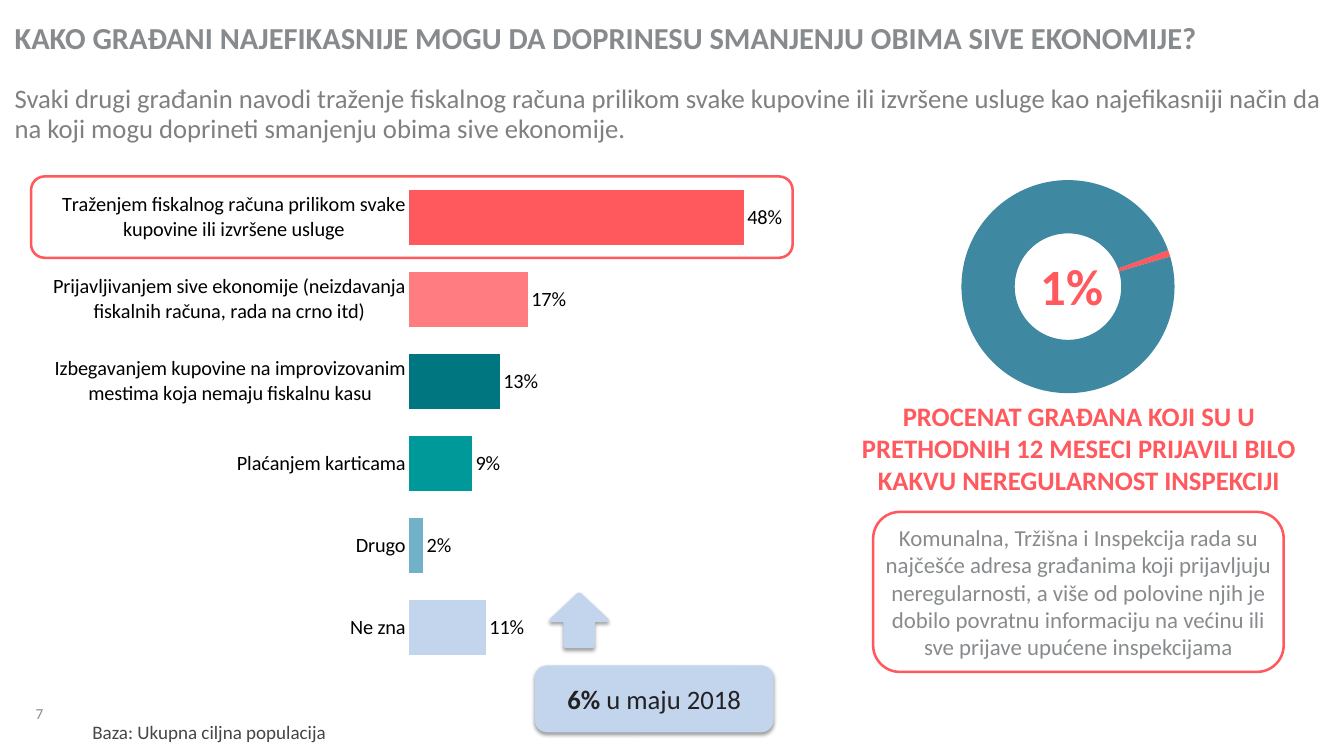
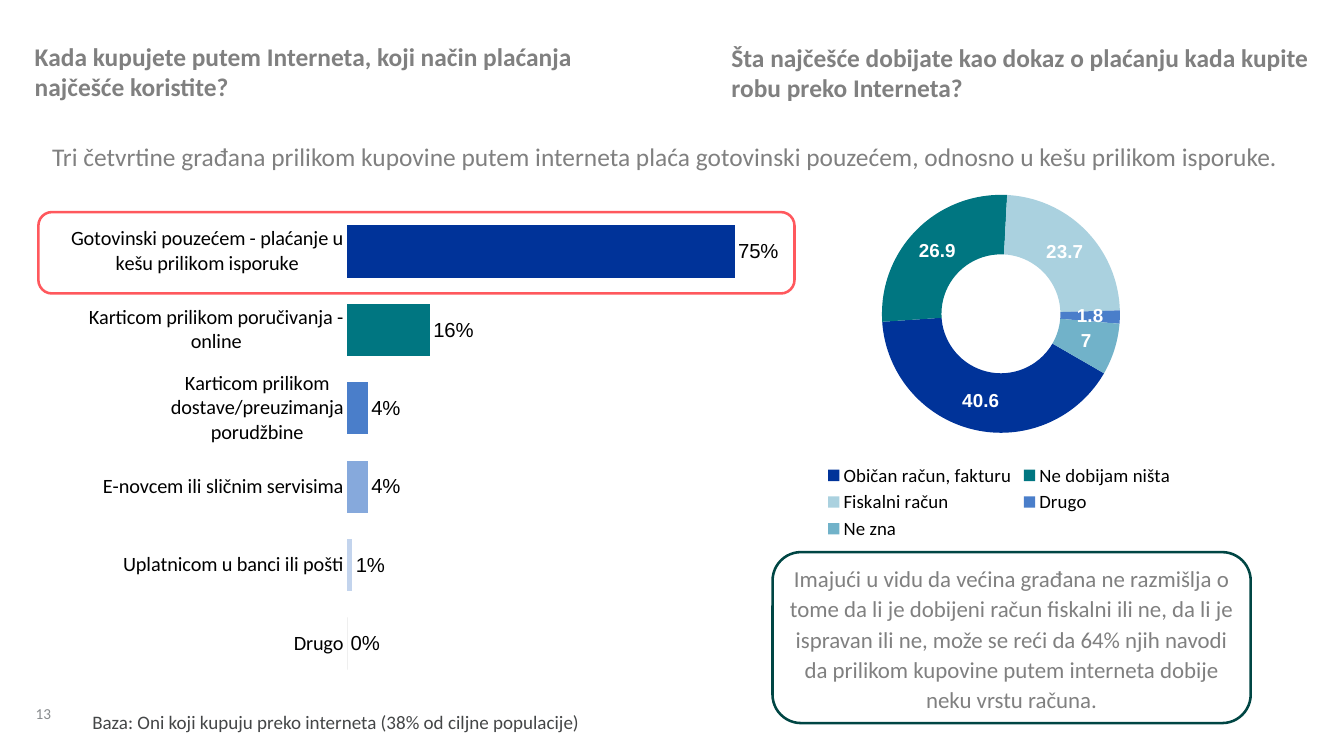
from pptx import Presentation
from pptx.chart.data import CategoryChartData
from pptx.dml.color import RGBColor
from pptx.enum.chart import (XL_CHART_TYPE as CT, XL_LABEL_POSITION as LP,
                             XL_LEGEND_POSITION as LEG, XL_TICK_MARK as TM)
from pptx.enum.shapes import MSO_SHAPE as MS
from pptx.enum.text import MSO_ANCHOR as MA, PP_ALIGN as AL
from pptx.oxml import parse_xml
from pptx.oxml.ns import nsdecls, qn
from pptx.util import Inches, Pt

# Colours
BLACK = RGBColor(0x00, 0x00, 0x00)
WHITE = RGBColor(0xFF, 0xFF, 0xFF)
INK = RGBColor(0x22, 0x22, 0x23)
DARK_GRAY = RGBColor(0x44, 0x46, 0x47)
GRAY = RGBColor(0x80, 0x80, 0x80)
COOL_GRAY = RGBColor(0x88, 0x8B, 0x8D)
CORAL = RGBColor(0xFF, 0x58, 0x5D)
PINK = RGBColor(0xFF, 0x7C, 0x80)
TEAL = RGBColor(0x00, 0x76, 0x81)
TURQUOISE = RGBColor(0x00, 0x99, 0x99)
DEEP_GREEN = RGBColor(0x00, 0x46, 0x44)
STEEL = RGBColor(0x3E, 0x88, 0xA1)
SKY = RGBColor(0x71, 0xB2, 0xC9)
PALE_SKY = RGBColor(0xAA, 0xD1, 0xDF)
NAVY = RGBColor(0x00, 0x33, 0x99)
BLUE = RGBColor(0x4A, 0x7E, 0xCA)
LIGHT_BLUE = RGBColor(0x86, 0xA9, 0xDC)
PALE_BLUE = RGBColor(0xC3, 0xD4, 0xED)

FONT = "Calibri"
PAD = (0.15, 0.07)


def set_font(font, size, color, bold=False, name=FONT):
    font.name, font.size, font.bold = name, Pt(size), bold
    font.color.rgb = color


class Deck:
    """Holds the presentation, its style and the current slide."""

    def __init__(self):
        self.prs = Presentation()
        self.prs.slide_width, self.prs.slide_height = Inches(14.7), Inches(8.27)

    def slide(self, number, base, base_box):
        self.s = self.prs.slides.add_slide(self.prs.slide_layouts[6])
        self.text((0.39, 7.53, 0.49, 0.38), [(number, False)], 12, COOL_GRAY,
                  anchor=MA.BOTTOM, spacing=0.85, wrap=False)
        self.text(base_box, [(base, False)], 15, DARK_GRAY,
                  anchor=MA.BOTTOM, spacing=0.95)

    def fill_text(self, sp, runs, size, color, align=AL.LEFT, anchor=MA.MIDDLE,
                  pad=(0, 0), spacing=None, wrap=True):
        tf = sp.text_frame
        tf.word_wrap, tf.vertical_anchor = wrap, anchor
        tf.margin_left = tf.margin_right = Inches(pad[0])
        tf.margin_top = tf.margin_bottom = Inches(pad[1])
        p = tf.paragraphs[0]
        p.alignment = align
        if spacing:
            p.line_spacing = spacing
        for text, bold in runs:
            r = p.add_run()
            r.text = text
            set_font(r.font, size, color, bold)

    def text(self, box, runs, size, color, **style):
        sp = self.s.shapes.add_textbox(*map(Inches, box))
        self.fill_text(sp, runs, size, color, **style)

    def shape(self, kind, box, line, width=2, fill=None, shadow=False):
        sp = self.s.shapes.add_shape(kind, *map(Inches, box))
        sp.shadow.inherit = False
        sp.line.color.rgb, sp.line.width = line, Pt(width)
        if fill is None:
            sp.fill.background()
        else:
            sp.fill.solid()
            sp.fill.fore_color.rgb = fill
        if shadow:
            sp._element.spPr.find(qn("a:effectLst")).append(parse_xml(
                f'<a:outerShdw {nsdecls("a")} blurRad="{Pt(3.1)}" dist="{Pt(1.6)}" '
                'dir="5400000" rotWithShape="0"><a:srgbClr val="000000">'
                '<a:alpha val="38000"/></a:srgbClr></a:outerShdw>'))
        return sp

    def highlight(self, box):
        self.shape(MS.ROUNDED_RECTANGLE, box, CORAL)

    def chart(self, kind, box, rows, layout):
        """Rows are (category, value, colour); layout is the inner plot area."""
        data = CategoryChartData()
        data.categories = [name for name, _, _ in rows]
        data.add_series("Series 1", [value for _, value, _ in rows])
        chart = self.s.shapes.add_chart(kind, *map(Inches, box), data).chart
        chart.has_title = chart.has_legend = False
        set_font(chart.font, 16, BLACK)
        plot = chart.plots[0]
        plot.vary_by_categories = kind == CT.DOUGHNUT
        series = plot.series[0]
        for i, (_, _, color) in enumerate(rows):
            fill = series.points[i].format.fill
            fill.solid()
            fill.fore_color.rgb = color
        area = chart._chartSpace.xpath(".//c:plotArea")[0]
        for old in area.xpath("./c:layout"):
            area.remove(old)
        sizes = "".join(f'<c:{k} val="{v}"/>' for k, v in zip("xywh", layout))
        area.insert(0, parse_xml(
            f'<c:layout {nsdecls("c")}><c:manualLayout><c:layoutTarget val="inner"/>'
            f'<c:xMode val="edge"/><c:yMode val="edge"/>{sizes}'
            '</c:manualLayout></c:layout>'))
        return chart, series

    def bars(self, box, rows, layout, maximum, label_font):
        chart, series = self.chart(CT.BAR_CLUSTERED, box, rows, layout)
        chart.plots[0].gap_width = 50
        cat, val = chart.category_axis, chart.value_axis
        cat.reverse_order = True
        cat.major_tick_mark = TM.NONE
        cat.format.line.fill.background()
        set_font(cat.tick_labels.font, 16, BLACK)
        val.visible = val.has_major_gridlines = False
        val.minimum_scale, val.maximum_scale = 0, maximum
        labels = series.data_labels
        labels.show_value = True
        labels.number_format, labels.number_format_is_linked = '0"%"', False
        labels.position = LP.OUTSIDE_END
        set_font(labels.font, 16, BLACK, name=label_font)

    def doughnut(self, box, rows, layout, start, labelled=False):
        chart, series = self.chart(CT.DOUGHNUT, box, rows, layout)
        space = chart._chartSpace
        space.xpath(".//c:firstSliceAng")[0].set("val", str(start))
        space.xpath(".//c:holeSize")[0].set("val", "50")
        if labelled:
            labels = series.data_labels
            labels.show_value, labels.show_percentage = True, False
            set_font(labels.font, 14.8, WHITE, True, "Arial")
            chart.has_legend = True
            chart.legend.position = LEG.BOTTOM
            chart.legend.include_in_layout = False
            set_font(chart.legend.font, 14.8, BLACK)


def contribution_slide(d):
    d.slide("7", "Baza: Ukupna ciljna populacija", (1.01, 7.51, 10.15, 0.63))

    # Title and summary
    d.text((0.16, 0.21, 14.38, 0.4),
           [("KAKO GRAĐANI NAJEFIKASNIJE MOGU DA DOPRINESU SMANJENJU OBIMA "
             "SIVE EKONOMIJE?", True)], 24, COOL_GRAY)
    d.text((0.16, 0.77, 14.38, 0.96),
           [("Svaki drugi građanin navodi traženje fiskalnog računa prilikom svake "
             "kupovine ili izvršene usluge kao najefikasniji način da na koji mogu "
             "doprineti smanjenju obima sive ekonomije.", False)],
           21, GRAY, spacing=0.95)

    # Ways to contribute
    d.bars((0.16, 1.73, 8.53, 5.75), [
        ("Traženjem fiskalnog računa prilikom svake kupovine ili izvršene usluge",
         48, CORAL),
        ("Prijavljivanjem sive ekonomije (neizdavanja fiskalnih računa, "
         "rada na crno itd)", 17, PINK),
        ("Izbegavanjem kupovine na improvizovanim mestima koja nemaju "
         "fiskalnu kasu", 13, TEAL),
        ("Plaćanjem karticama", 9, TURQUOISE),
        ("Drugo", 2, SKY),
        ("Ne zna", 11, PALE_BLUE),
    ], (0.506, 0.035, 0.447, 0.936), 50, FONT)
    d.highlight((0.34, 1.93, 8.33, 0.89))

    # Earlier result
    d.shape(MS.UP_ARROW, (6.03, 6.5, 0.61, 0.57), PALE_BLUE, 3, PALE_BLUE, True)
    sp = d.shape(MS.ROUNDED_RECTANGLE, (5.87, 7.3, 2.57, 0.69),
                 PALE_BLUE, 3, PALE_BLUE, True)
    d.fill_text(sp, [("6% ", True), ("u maju 2018", False)], 21, INK,
                align=AL.CENTER, pad=PAD)

    # Share of citizens who reported
    d.doughnut((7.66, 0.59, 7.72, 5.16), [("1", 1, CORAL), ("2", 99, STEEL)],
               (0.37, 0.125, 0.302, 0.737), 70)
    d.text((9.32, 4.37, 4.96, 1.15),
           [("PROCENAT GRAĐANA KOJI SU U PRETHODNIH 12 MESECI PRIJAVILI BILO "
             "KAKVU NEREGULARNOST INSPEKCIJI", True)],
           21, CORAL, align=AL.CENTER, anchor=MA.TOP)
    d.text((11.06, 2.72, 1.33, 0.84), [("1%", True)], 40, CORAL,
           align=AL.CENTER, anchor=MA.TOP, pad=PAD)
    sp = d.shape(MS.ROUNDED_RECTANGLE, (9.55, 5.6, 4.49, 1.75), CORAL)
    d.fill_text(sp, [("Komunalna, Tržišna i Inspekcija rada su najčešće adresa "
                      "građanima koji prijavljuju neregularnosti, a više od polovine "
                      "njih je dobilo povratnu informaciju na većinu ili sve prijave "
                      "upućene inspekcijama", False)],
                18, COOL_GRAY, align=AL.CENTER, pad=(0, 0.06))


def online_payment_slide(d):
    d.slide("13", "Baza: Oni koji kupuju preko interneta (38% od ciljne populacije)",
            (1.01, 7.52, 5.47, 0.51))

    # Questions and summary
    for left, top, question in (
            (0.2, 0.41, "Kada kupujete putem Interneta, koji način plaćanja "
                        "najčešće koristite?"),
            (7.82, 0.42, "Šta najčešće dobijate kao dokaz o plaćanju kada kupite "
                         "robu preko Interneta?")):
        d.text((left, top, 6.82, 0.74), [(question, True)], 20, GRAY, pad=(0.18, 0.07))
    d.text((0.39, 1.34, 13.84, 0.74),
           [("Tri četvrtine građana prilikom kupovine putem interneta plaća "
             "gotovinski pouzećem, odnosno u kešu prilikom isporuke.", False)],
           20, GRAY, align=AL.JUSTIFY, pad=(0.18, 0.07))

    # Payment methods
    d.bars((0.5, 2.1, 8.06, 5.56), [
        ("Gotovinski pouzećem - plaćanje u kešu prilikom isporuke", 75, NAVY),
        ("Karticom prilikom poručivanja - online", 16, TEAL),
        ("Karticom prilikom dostave/preuzimanja porudžbine", 4, BLUE),
        ("E-novcem ili sličnim servisima", 4, LIGHT_BLUE),
        ("Uplatnicom u banci ili pošti", 1, PALE_BLUE),
        ("Drugo", 0, GRAY),
    ], (0.409, 0.04, 0.561, 0.926), 80, "Arial")
    d.highlight((0.42, 2.32, 8.27, 0.89))

    # Proof of payment
    d.doughnut((7.86, 1.93, 6.14, 4.02), [
        ("Običan račun, fakturu", 40.6, NAVY),
        ("Ne dobijam ništa", 26.9, TEAL),
        ("Fiskalni račun", 23.7, PALE_SKY),
        ("Drugo", 1.8, BLUE),
        ("Ne zna", 7, SKY),
    ], (0.291, 0.05, 0.424, 0.648), 120, labelled=True)
    sp = d.shape(MS.ROUNDED_RECTANGLE, (8.45, 6.04, 5.23, 1.87), DEEP_GREEN, fill=WHITE)
    d.fill_text(sp, [("Imajući u vidu da većina građana ne razmišlja o tome da li je "
                      "dobijeni račun fiskalni ili ne, da li je ispravan ili ne, može "
                      "se reći da 64% njih navodi da prilikom kupovine putem "
                      "interneta dobije neku vrstu računa.", False)],
                18, GRAY, align=AL.CENTER, pad=(0.04, 0.04), spacing=1.1)


def main():
    d = Deck()
    contribution_slide(d)
    online_payment_slide(d)
    d.prs.save("out.pptx")


if __name__ == "__main__":
    main()
